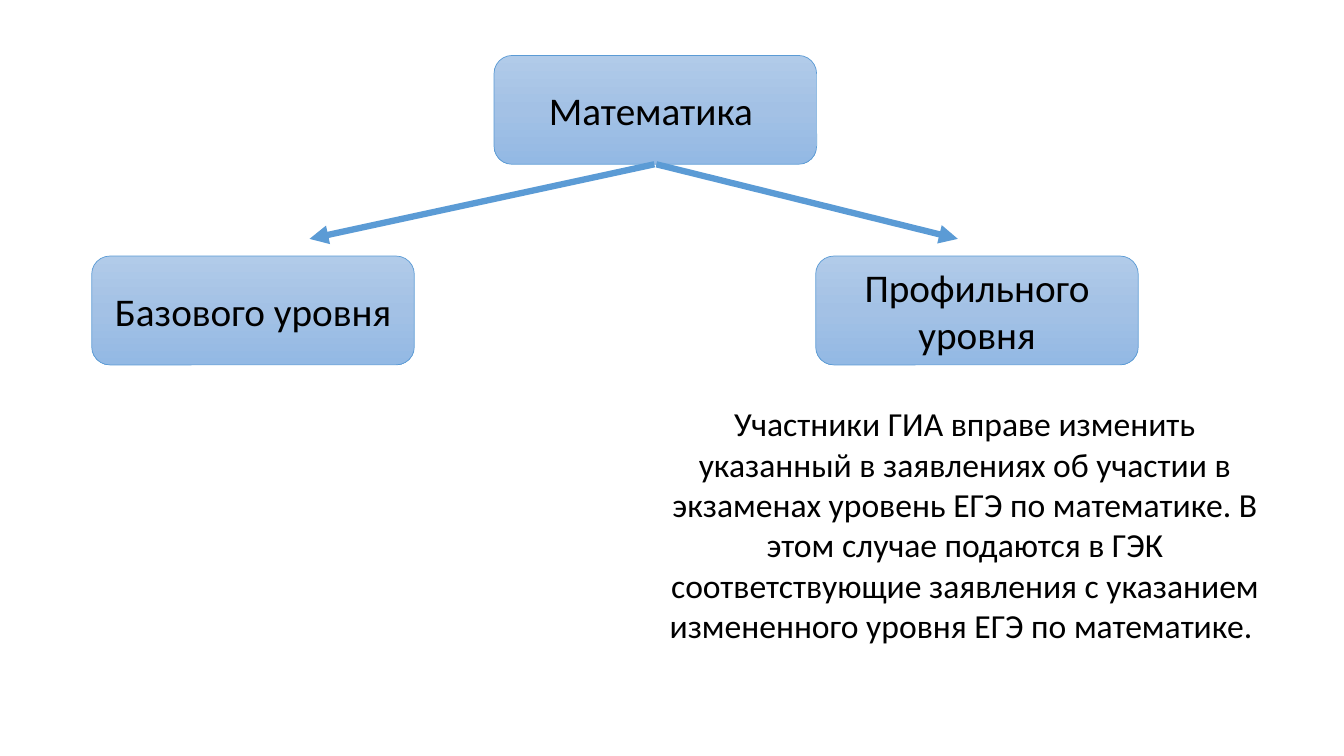
from copy import deepcopy
from dataclasses import dataclass

from lxml import etree
from pptx import Presentation
from pptx import util as u
from pptx.dml.color import RGBColor
from pptx.enum import shapes, text
from pptx.oxml import ns


@dataclass(frozen=True)
class Theme:
    """Colours, font and type sizes of the slide."""
    font: str = "Calibri"
    ink: str = "000000"
    accent: str = "5B9BD5"
    gradient: tuple = ("B1CBE9", "A3C1E5", "93B9E4")
    level_size: int = 28
    note_size: int = 24


THEME = Theme()
BOX_WIDTH, BOX_HEIGHT = 3.2, 1.08
SUBJECT_LEFT, SUBJECT_TOP = 4.9, 0.55
LEVEL_TOP = 2.54
ARROW_END = 2.37
NOTE = (
    "Участники ГИА вправе изменить указанный в заявлениях об участии в "
    "экзаменах уровень ЕГЭ по математике. В этом случае подаются в ГЭК "
    "соответствующие заявления с указанием измененного уровня ЕГЭ по математике. "
)


def write(frame, words, size=THEME.level_size, color=THEME.ink, inset=0.1,
          anchor=text.MSO_ANCHOR.MIDDLE, align=text.PP_ALIGN.CENTER):
    """Put formatted words into a text frame."""
    frame.word_wrap = True
    frame.vertical_anchor = anchor
    frame.margin_left = frame.margin_right = u.Inches(inset)
    paragraph = frame.paragraphs[0]
    paragraph.alignment = align
    run = paragraph.add_run()
    run.text = words
    run.font.name = THEME.font
    run.font.size = u.Pt(size)
    run.font.color.rgb = RGBColor.from_string(color)


def fill_gradient(box):
    """Fill a box with the three-stop gradient running downwards."""
    box.fill.gradient()
    box.fill.gradient_angle = 270
    first = box._element.spPr.find(".//" + ns.qn("a:gs"))
    middle = deepcopy(first)
    middle.set("pos", "50000")
    first.addnext(middle)
    for stop, color in zip(box.fill.gradient_stops, THEME.gradient):
        stop.color.rgb = RGBColor.from_string(color)


def add_box(slide, words, left, top):
    """Add a rounded box holding a subject or level."""
    box = slide.shapes.add_shape(
        shapes.MSO_SHAPE.ROUNDED_RECTANGLE, u.Inches(left), u.Inches(top),
        u.Inches(BOX_WIDTH), u.Inches(BOX_HEIGHT))
    box.shadow.inherit = False
    fill_gradient(box)
    box.line.color.rgb = RGBColor.from_string(THEME.accent)
    box.line.width = u.Pt(0.5)
    write(box.text_frame, words)


def add_arrow(slide, start, end):
    """Add a thick arrow between two points in inches."""
    arrow = slide.shapes.add_connector(
        shapes.MSO_CONNECTOR.STRAIGHT, *map(u.Inches, start + end))
    arrow.line.color.rgb = RGBColor.from_string(THEME.accent)
    arrow.line.width = u.Pt(4.5)
    etree.SubElement(arrow.line._get_or_add_ln(), ns.qn("a:tailEnd"), type="triangle")
    etree.SubElement(arrow._element.spPr, ns.qn("a:effectLst"))


def add_note(slide, words, left, top, width, height):
    """Add the explanatory text under a level."""
    note = slide.shapes.add_textbox(*map(u.Inches, (left, top, width, height)))
    write(note.text_frame, words, size=THEME.note_size, inset=0.18,
          anchor=text.MSO_ANCHOR.TOP)
    note.text_frame.auto_size = text.MSO_AUTO_SIZE.SHAPE_TO_FIT_TEXT


def main():
    """Build the slide on the levels of the mathematics exam."""
    deck = Presentation()
    deck.slide_width, deck.slide_height = u.Inches(13.33), u.Inches(7.5)
    slide = deck.slides.add_slide(deck.slide_layouts[6])

    add_box(slide, "Математика ", SUBJECT_LEFT, SUBJECT_TOP)
    subject_bottom = SUBJECT_TOP + BOX_HEIGHT
    for start_x, end_x in ((6.49, 3.07), (6.51, 9.5)):
        add_arrow(slide, (start_x, subject_bottom), (end_x, ARROW_END))
    for level, left in (("Базового уровня", 0.91), ("Профильного уровня", 8.09)):
        add_box(slide, level, left, LEVEL_TOP)
    add_note(slide, NOTE, 6.37, 3.95, 6.4, 2.52)

    deck.save("out.pptx")


if __name__ == "__main__":
    main()
